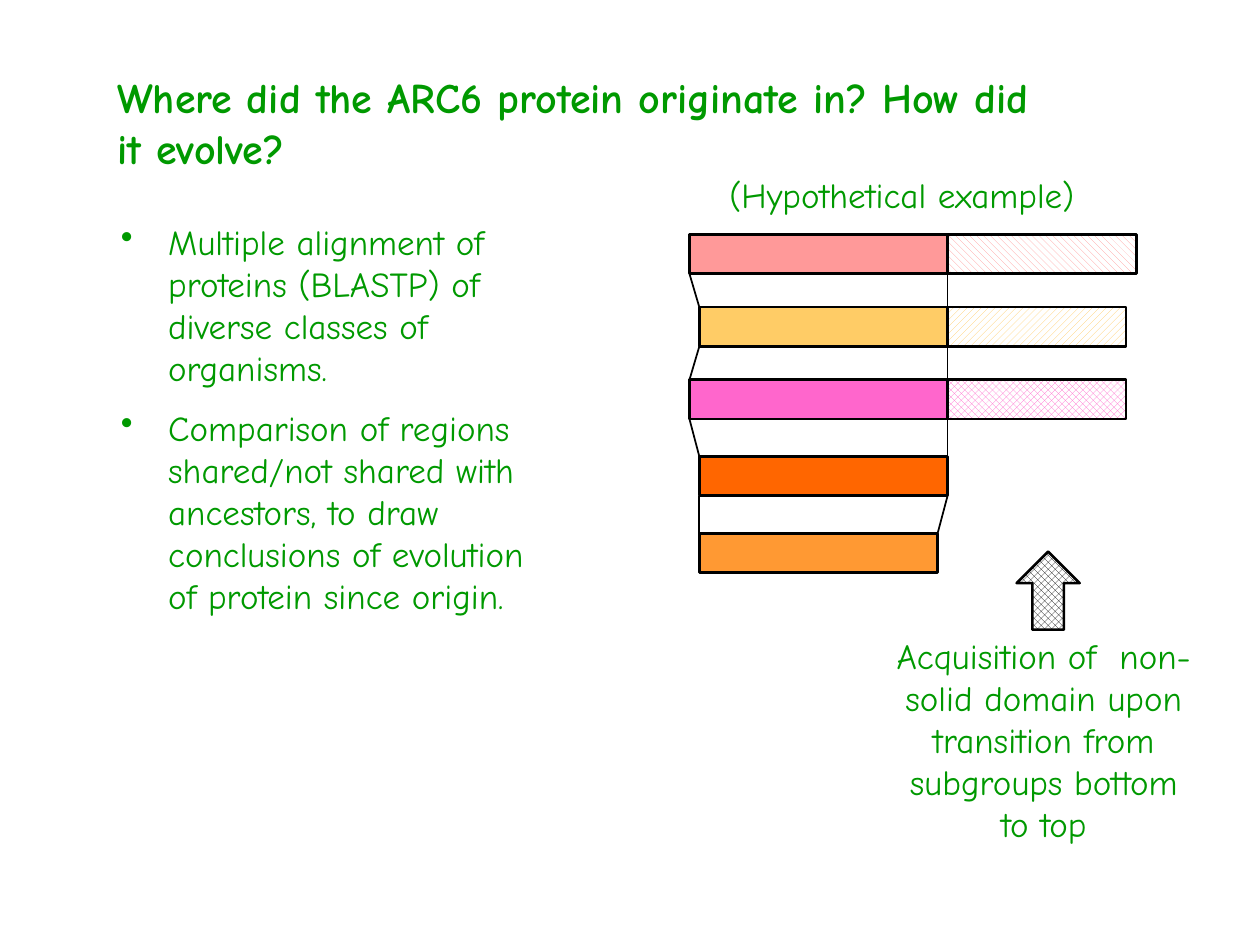
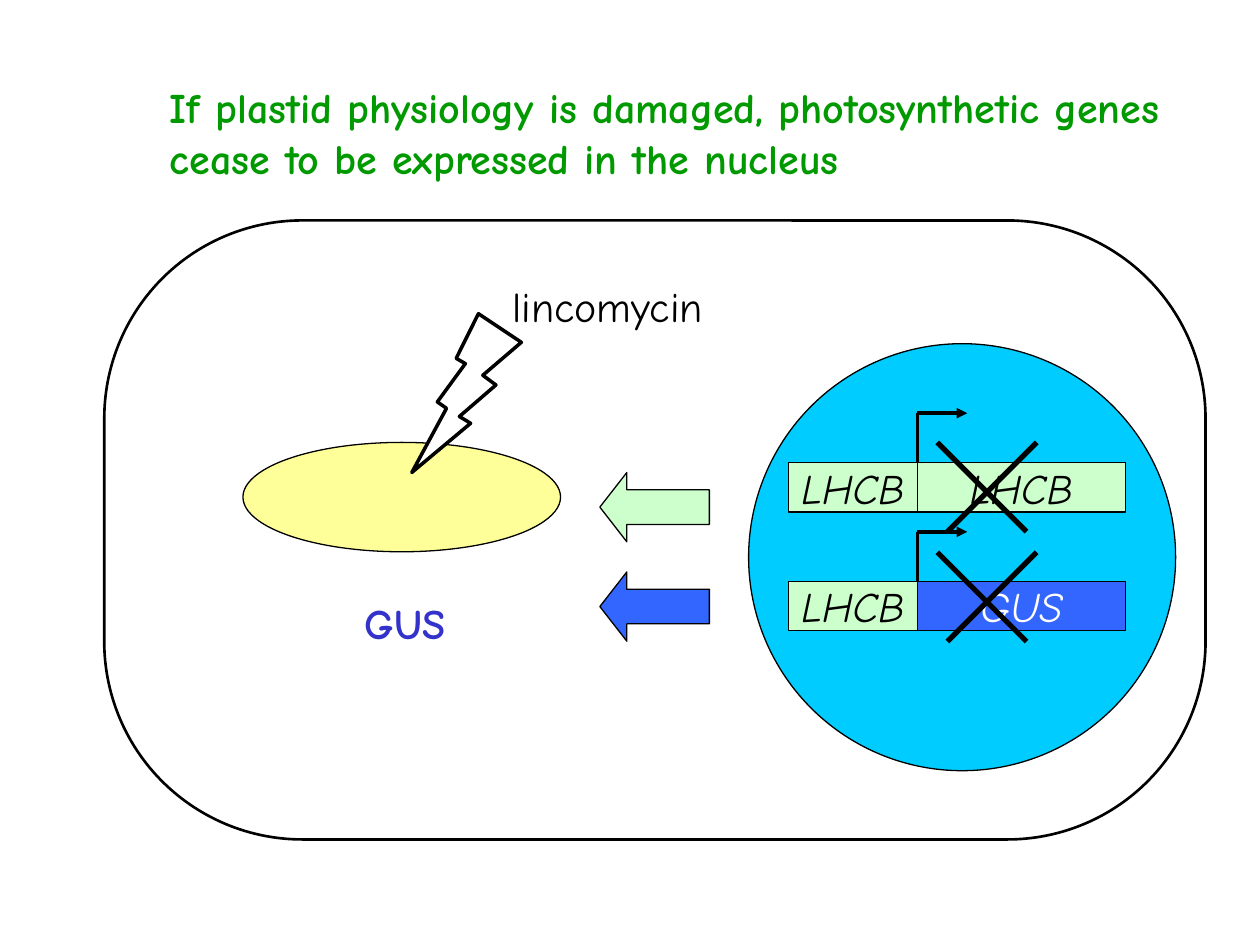
from lxml import etree
from pptx import Presentation
from pptx.dml.color import RGBColor
from pptx.enum.dml import MSO_PATTERN
from pptx.enum.shapes import MSO_CONNECTOR, MSO_SHAPE
from pptx.enum.text import MSO_ANCHOR, PP_ALIGN
from pptx.oxml.ns import qn
from pptx.util import Pt

RECT, ROUND_RECT, OVAL = MSO_SHAPE.RECTANGLE, MSO_SHAPE.ROUNDED_RECTANGLE, MSO_SHAPE.OVAL
UP_ARROW, LEFT_ARROW, BOLT = MSO_SHAPE.UP_ARROW, MSO_SHAPE.LEFT_ARROW, MSO_SHAPE.LIGHTNING_BOLT
STRAIGHT = MSO_CONNECTOR.STRAIGHT
DOWN_DIAG = MSO_PATTERN.WIDE_DOWNWARD_DIAGONAL
UP_DIAG = MSO_PATTERN.WIDE_UPWARD_DIAGONAL
DIAMOND = MSO_PATTERN.SOLID_DIAMOND
LEFT, CENTER = PP_ALIGN.LEFT, PP_ALIGN.CENTER
MIDDLE = MSO_ANCHOR.MIDDLE

FONT = "Comic Neue"
GREEN, BLACK, WHITE = "009900", "000000", "FFFFFF"
MINT, BLUE, SKY, YELLOW, INDIGO = "CCFFCC", "3366FF", "00CCFF", "FFFF99", "3333CC"
TITLE_SIZE, BODY_SIZE = 24, 20

ORIGIN_TITLE = "Where did the ARC6 protein originate in? How did it evolve?"
METHODS = [
    "Multiple alignment of proteins (BLASTP) of diverse classes of organisms.",
    "Comparison of regions shared/not shared with ancestors, to draw conclusions "
    "of evolution of protein since origin.",
]
ACQUISITION = "Acquisition of  non-solid domain upon transition from subgroups bottom to top"
BAR_H = 22.5
# top, left, end of shared domain, end of acquired domain, colour, pattern
PROTEINS = [
    (134, 394, 541.5, 649.5, "FF9999", DOWN_DIAG),
    (175.5, 399.6, 541.5, 643.5, "FFCC66", UP_DIAG),
    (217, 394, 541.5, 643.5, "FF66CC", DIAMOND),
    (260.8, 399.6, 541.5, None, "FF6600", None),
    (304.8, 399.6, 535.8, None, "FF9933", None),
]

PLASTID_TITLE = ("If plastid physiology is damaged, photosynthetic genes "
                 "cease to be expressed in the nucleus")
# top, gene name, fill, text colour, top of cross, top of product arrow
GENES = [
    (264.4, "LHCB", MINT, BLACK, 252.8, 270),
    (332.2, "GUS", BLUE, WHITE, 315.6, 326.8),
]
PROMOTER_X, GENE_X, GENE_END, GENE_H = 450.6, 524.2, 643.2, 28.3
CROSS_X, CROSS_SIZE, CROSS_SHIFT = 535.6, 51, 5.8


def rgb(color):
    return RGBColor.from_string(color)


def write(sp, paragraphs, size, color, align=LEFT, bold=False, italic=False):
    tf = sp.text_frame
    tf.text = "\n".join(paragraphs)
    for p in tf.paragraphs:
        p.alignment = align
        for r in p.runs:
            f = r.font
            f.name, f.size, f.bold, f.italic = FONT, Pt(size), bold, italic
            f.color.rgb = rgb(color)
    return tf


def add_text(s, box, paragraphs, size=BODY_SIZE, color=GREEN, **style):
    sp = s.shapes.add_textbox(*map(Pt, box))
    tf = write(sp, paragraphs, size, color, **style)
    tf.word_wrap = True
    return tf


def add_bullets(s, box, items):
    tf = add_text(s, box, items)
    for i, p in enumerate(tf.paragraphs):
        if i:
            p.space_before = Pt(BODY_SIZE / 2)
        pPr = p._p.get_or_add_pPr()
        pPr.set("marL", str(Pt(27)))
        pPr.set("indent", str(Pt(-27)))
        etree.SubElement(pPr, qn("a:buChar")).set("char", "•")


def add_shape(s, kind, box, fill=None, width=0.75, pattern=None):
    """Add a black-outlined shape; with a pattern, fill is its foreground."""
    sp = s.shapes.add_shape(kind, *map(Pt, box))
    sp.shadow.inherit = False
    sp.line.color.rgb = rgb(BLACK)
    sp.line.width = Pt(width)
    if pattern is not None:
        sp.fill.patterned()
        sp.fill.pattern = pattern
        sp.fill.fore_color.rgb = rgb(fill)
        sp.fill.back_color.rgb = rgb(WHITE)
    elif fill:
        sp.fill.solid()
        sp.fill.fore_color.rgb = rgb(fill)
    else:
        sp.fill.background()
    return sp


def add_line(s, x1, y1, x2, y2, width, arrow=False):
    c = s.shapes.add_connector(STRAIGHT, Pt(x1), Pt(y1), Pt(x2), Pt(y2))
    c.line.color.rgb = rgb(BLACK)
    c.line.width = Pt(width)
    spPr = c.element.spPr
    if arrow:
        etree.SubElement(spPr.find(qn("a:ln")), qn("a:tailEnd")).set("type", "triangle")
    etree.SubElement(spPr, qn("a:effectLst"))


def add_gene_box(s, x, end, top, name, fill, color):
    sp = add_shape(s, RECT, (x, top, end - x, GENE_H), fill)
    tf = write(sp, [name], TITLE_SIZE, color, align=CENTER, italic=True)
    tf.word_wrap = False
    tf.vertical_anchor = MIDDLE


def add_slide(prs, title, box):
    s = prs.slides.add_slide(prs.slide_layouts[6])
    add_text(s, box, [title], TITLE_SIZE, bold=True)
    return s


def build_origin(prs):
    s = add_slide(prs, ORIGIN_TITLE, (60, 37.5, 553.5, 65.5))
    add_bullets(s, (62, 122.4, 256.4, 262), METHODS)
    for top, left, split, end, color, pattern in PROTEINS:
        add_shape(s, RECT, (left, top, split - left, BAR_H), color, 1.5)
        if end:
            add_shape(s, RECT, (split, top, end - split, BAR_H), color, 1.5, pattern)
    for upper, lower in zip(PROTEINS, PROTEINS[1:]):
        for side in (1, 2):
            add_line(s, upper[side], upper[0] + BAR_H, lower[side], lower[0], 1)
    add_text(s, (504, 359.3, 185, 128), [ACQUISITION], align=CENTER)
    add_shape(s, UP_ARROW, (581, 315.2, 36, 44.6), BLACK, 1.5, DIAMOND)
    add_text(s, (409.7, 95.8, 244, 31.7), ["(Hypothetical example)"])


def build_plastid(prs):
    s = add_slide(prs, PLASTID_TITLE, (90, 43.2, 606.2, 65))
    add_shape(s, OVAL, (427.8, 196.4, 244, 244), SKY)
    for top, name, fill, color, cross_y, arrow_y in GENES:
        add_gene_box(s, GENE_X, GENE_END, top, name, fill, color)
        add_gene_box(s, PROMOTER_X, GENE_X, top, "LHCB", MINT, BLACK)
        start_y = top - GENE_H
        add_line(s, GENE_X, start_y, GENE_X, top, 2)
        add_line(s, GENE_X, start_y, GENE_X + 28.5, start_y, 2, arrow=True)
        arrow = add_shape(s, LEFT_ARROW, (342.8, arrow_y, 62.6, 39.6), fill)
        arrow.adjustments[1] = 0.39
    for *_, cross_y, _ in GENES:
        bottom, right = cross_y + CROSS_SIZE, CROSS_X + CROSS_SIZE
        add_line(s, CROSS_X, cross_y, right, bottom, 3)
        add_line(s, right + CROSS_SHIFT, cross_y, CROSS_X + CROSS_SHIFT, bottom, 3)
    add_text(s, (201.4, 337.7, 91, 36), ["GUS"], TITLE_SIZE, INDIGO, bold=True)
    add_shape(s, OVAL, (138.8, 252.8, 181.5, 62.5), YELLOW)
    bolt = add_shape(s, BOLT, (235.4, 179.3, 62.6, 90.7), WHITE, 2)
    bolt.element.spPr.find(qn("a:xfrm")).set("flipH", "1")
    add_text(s, (285.8, 157, 130.3, 36), ["lincomycin"], TITLE_SIZE, BLACK)
    cell = add_shape(s, ROUND_RECT, (59.6, 126, 629.3, 353.7), width=1.5)
    cell.adjustments[0] = 0.32


def main():
    prs = Presentation()
    prs.slide_width, prs.slide_height = Pt(720), Pt(540)
    build_origin(prs)
    build_plastid(prs)
    prs.save("out.pptx")


if __name__ == "__main__":
    main()
